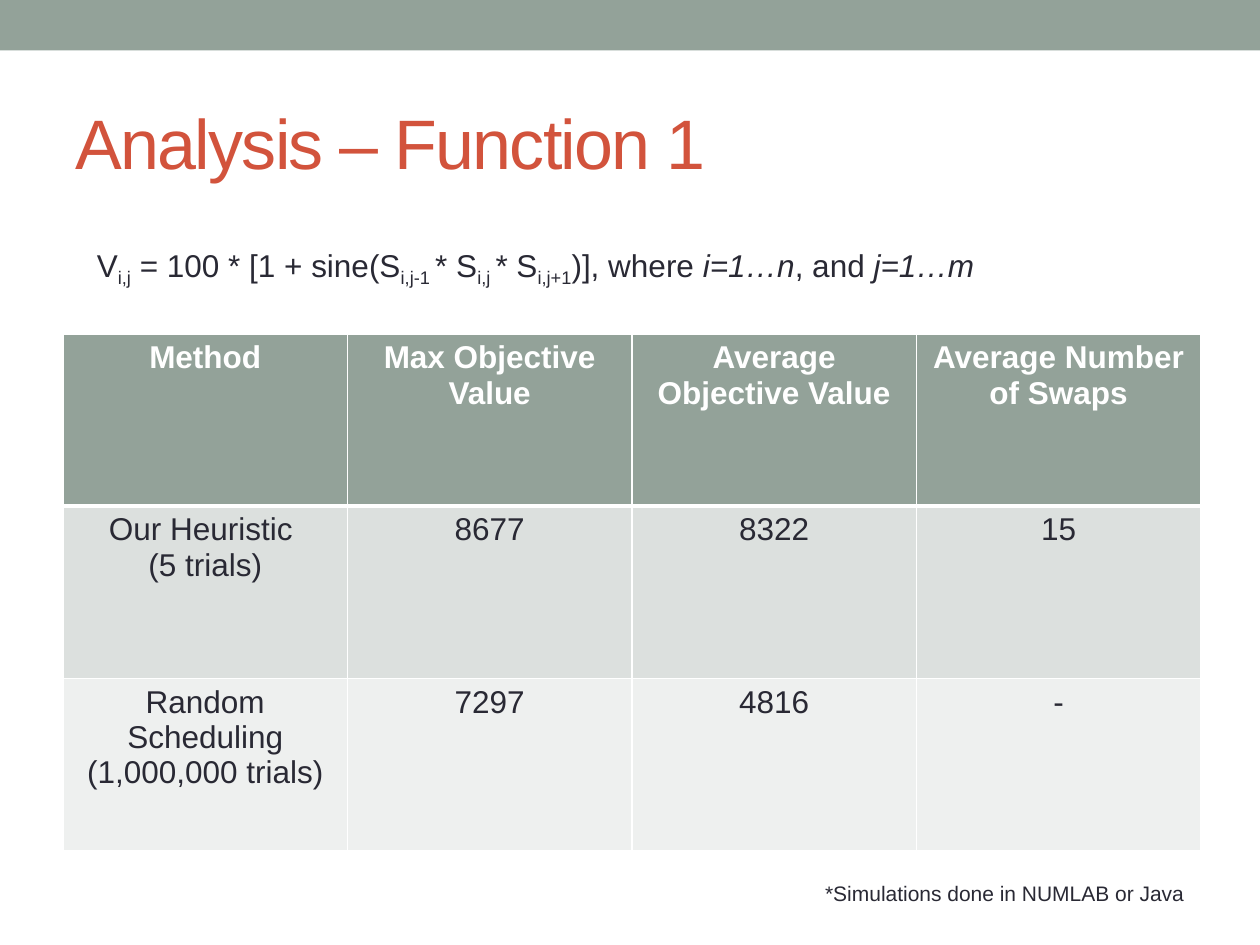
from lxml.etree import SubElement
from pptx import Presentation
from pptx.dml.color import RGBColor
from pptx.enum.shapes import MSO_SHAPE
from pptx.enum.text import MSO_ANCHOR, MSO_AUTO_SIZE, PP_ALIGN
from pptx.oxml.ns import qn
from pptx.util import Inches, Pt

FONT = "Arial"
COLORS = {
    "sage": "93A299",
    "title": "D2533C",
    "text": "292934",
    "white": "FFFFFF",
    "first_row": "DCE0DE",
    "second_row": "EEF0EF",
}

TITLE = "Analysis – Function 1"
# (text, style) where style is "", "sub" or "italic"
FORMULA = [
    ("V", ""), ("i,j", "sub"),
    (" = 100 * [1 + sine(S", ""), ("i,j-1 ", "sub"),
    ("* S", ""), ("i,j ", "sub"),
    ("* S", ""), ("i,j+1", "sub"),
    (")], where ", ""), ("i=1…n", "italic"),
    (", and ", ""), ("j=1…m", "italic"),
]
FOOTNOTE = [("*Simulations done in NUMLAB or Java", "")]
# Each cell is a list of paragraphs
RESULTS = [
    [["Method"], ["Max Objective Value"], ["Average Objective Value"], ["Average Number of Swaps"]],
    [["Our Heuristic ", "(5 trials)"], ["8677"], ["8322"], ["15"]],
    [["Random Scheduling (1,000,000 trials)"], ["7297"], ["4816"], ["-"]],
]
ROW_FILLS = ["sage", "first_row", "second_row"]


def rgb(name):
    return RGBColor.from_string(COLORS[name])


def add_run(paragraph, text, size, color, bold=False):
    run = paragraph.add_run()
    run.text = text
    run.font.name = FONT
    run.font.size = Pt(size)
    run.font.bold = bold
    run.font.color.rgb = rgb(color)
    return run


def add_line_of_text(slide, runs, size, left, top, width, height):
    box = slide.shapes.add_textbox(Inches(left), Inches(top), Inches(width), Inches(height))
    frame = box.text_frame
    frame.word_wrap = False
    frame.auto_size = MSO_AUTO_SIZE.SHAPE_TO_FIT_TEXT
    for text, style in runs:
        run = add_run(frame.paragraphs[0], text, size, "text")
        if style == "sub":
            run.font._element.set("baseline", "-25000")
        elif style == "italic":
            run.font.italic = True


def set_borders(cell, top, bottom):
    """Draw white cell borders; top and bottom are widths in points."""
    properties = cell._tc.get_or_add_tcPr()
    for side, width in (("L", 1), ("R", 1), ("T", top), ("B", bottom)):
        line = SubElement(properties, qn(f"a:ln{side}"), w=str(Pt(width)))
        fill = SubElement(line, qn("a:solidFill"))
        SubElement(fill, qn("a:srgbClr"), val=COLORS["white"])


def add_header_bar(slide):
    bar = slide.shapes.add_shape(MSO_SHAPE.RECTANGLE, 0, 0, Inches(10), Inches(0.4))
    bar.shadow.inherit = False
    bar.fill.solid()
    bar.fill.fore_color.rgb = rgb("sage")
    bar.line.fill.background()


def add_title(slide):
    title = slide.shapes.title
    title.left, title.top = Inches(0.5), Inches(0.58)
    title.width, title.height = Inches(9), Inches(1.08)
    frame = title.text_frame
    frame.vertical_anchor = MSO_ANCHOR.MIDDLE
    frame.paragraphs[0].alignment = PP_ALIGN.LEFT
    run = add_run(frame.paragraphs[0], TITLE, 40, "title")
    run.font._element.set("spc", "-100")


def add_results(slide):
    table = slide.shapes.add_table(
        len(RESULTS), len(RESULTS[0]), Inches(0.5), Inches(2.65), Inches(9.03), Inches(4.1)
    ).table
    for r, (row, fill) in enumerate(zip(RESULTS, ROW_FILLS)):
        is_header = r == 0
        for c, paragraphs in enumerate(row):
            cell = table.cell(r, c)
            set_borders(cell, top=3 if r == 1 else 1, bottom=3 if is_header else 1)
            cell.fill.solid()
            cell.fill.fore_color.rgb = rgb(fill)
            frame = cell.text_frame
            for i, text in enumerate(paragraphs):
                paragraph = frame.add_paragraph() if i else frame.paragraphs[0]
                paragraph.alignment = PP_ALIGN.CENTER
                add_run(paragraph, text, 18, "white" if is_header else "text", bold=is_header)


def main():
    prs = Presentation()
    prs.slide_width, prs.slide_height = Inches(10), Inches(7.5)
    slide = prs.slides.add_slide(prs.slide_layouts[5])
    add_header_bar(slide)
    add_title(slide)
    add_results(slide)
    add_line_of_text(slide, FOOTNOTE, 12, 6.45, 6.94, 3.08, 0.3)
    add_line_of_text(slide, FORMULA, 18, 0.67, 1.9, 7.41, 0.4)
    prs.save("out.pptx")


if __name__ == "__main__":
    main()
